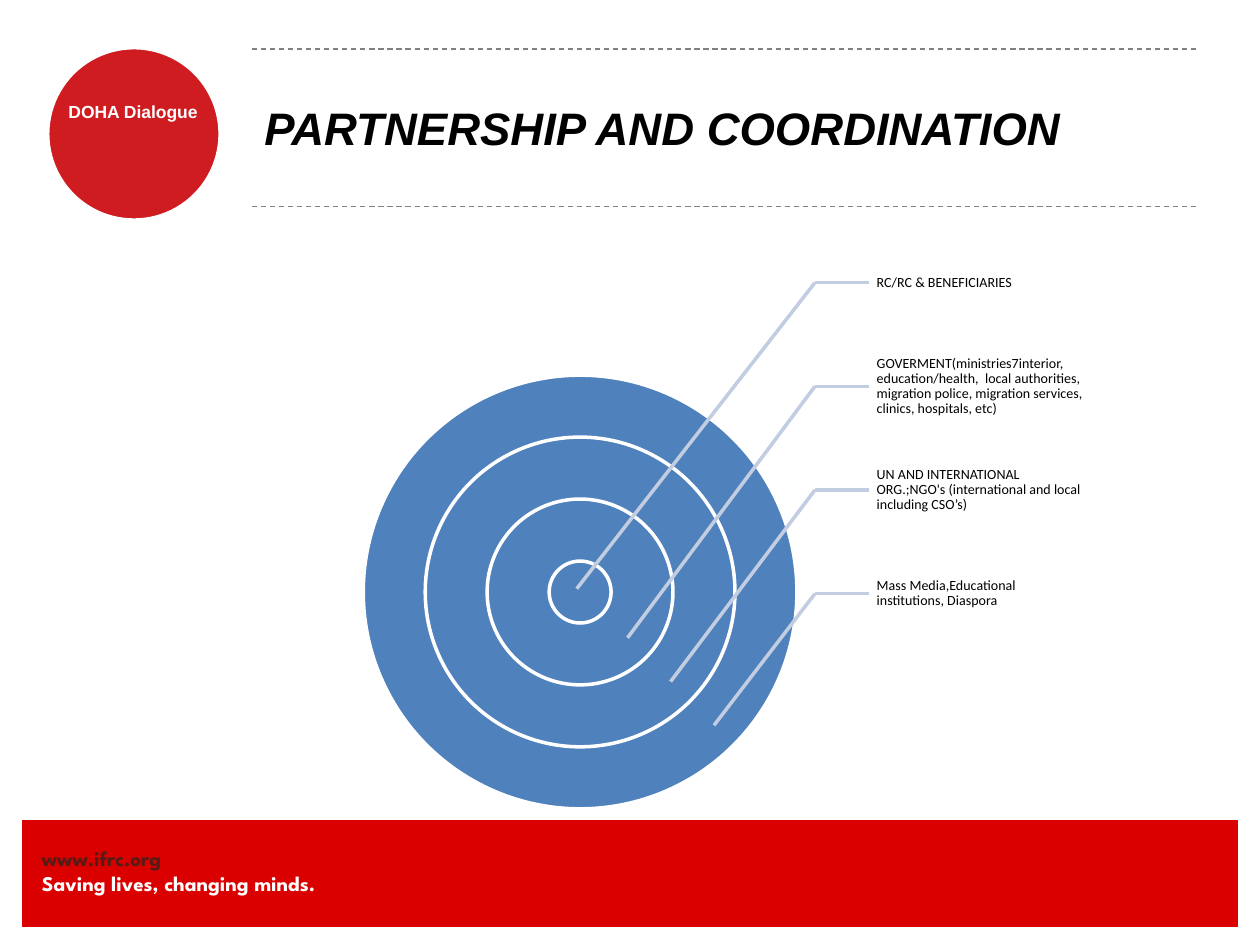
from dataclasses import dataclass
from typing import Any

from lxml import etree
from pptx import Presentation
from pptx import util as u
from pptx.dml.color import RGBColor
from pptx.enum import dml, shapes, text
from pptx.oxml.ns import qn

COLORS = {
    "white": "FFFFFF", "black": "000000", "banner": "DB0000", "badge": "CF1C21",
    "address": "551C15", "rule": "808080", "ring": "4F81BD", "leader": "C2CDE1",
}


@dataclass
class Painter:
    """Draws styled elements on the current page, with lengths in points."""
    page: Any
    colors: dict

    def color(self, name):
        return RGBColor.from_string(self.colors[name])

    def shape(self, kind, left, top, width, height, fill, weight):
        shape = self.page.shapes.add_shape(
            kind, u.Pt(left), u.Pt(top), u.Pt(width), u.Pt(height))
        shape.shadow.inherit = False
        shape.fill.solid()
        shape.fill.fore_color.rgb = self.color(fill)
        shape.line.color.rgb = self.color("white")
        shape.line.width = u.Pt(weight)
        return shape

    def circle(self, x, y, radius, fill, weight):
        return self.shape(shapes.MSO_SHAPE.OVAL, x - radius, y - radius,
                          2 * radius, 2 * radius, fill, weight)

    def line(self, start, end, color, weight, dash=None):
        line = self.page.shapes.add_connector(
            shapes.MSO_CONNECTOR.STRAIGHT, *(u.Pt(v) for v in (*start, *end)))
        line.line.color.rgb = self.color(color)
        line.line.width = u.Pt(weight)
        if dash:
            line.line.dash_style = dash
        etree.SubElement(line._element.spPr, qn("a:effectLst"))
        return line

    def text(self, left, top, width, height, lines, size, font, insets=(0, 0, 0, 0),
             bold=False, italic=False, align=text.PP_ALIGN.LEFT,
             anchor=text.MSO_ANCHOR.TOP, spacing=1.0):
        box = self.page.shapes.add_textbox(
            u.Pt(left), u.Pt(top), u.Pt(width), u.Pt(height))
        frame = box.text_frame
        frame.word_wrap = True
        frame.vertical_anchor = anchor
        (frame.margin_left, frame.margin_top,
         frame.margin_right, frame.margin_bottom) = (u.Pt(v) for v in insets)
        for index, (words, color) in enumerate(lines):
            para = frame.add_paragraph() if index else frame.paragraphs[0]
            para.alignment = align
            para.line_spacing = spacing
            span = para.add_run()
            span.text = words
            span.font.name = font
            span.font.size = u.Pt(size)
            span.font.bold = bold
            span.font.italic = italic
            span.font.color.rgb = self.color(color)
        return box


def draw_frame(painter):
    painter.shape(shapes.MSO_SHAPE.RECTANGLE, 12, 468, 696, 62, "banner", 0.75)
    painter.text(24, 483, 246, 29,
                 [("www.ifrc.org", "address"), ("Saving lives, changing minds.", "white")],
                 12, "League Spartan", bold=True)
    painter.circle(76.5, 76.5, 49.5, "badge", 2.5)
    painter.text(31, 58, 90, 12, [("DOHA Dialogue", "white")], 10, "Arial",
                 bold=True, align=text.PP_ALIGN.CENTER)
    for y in (28, 118):
        painter.line((144, y), (684, y), "rule", 0.75, dml.MSO_LINE.DASH)
    painter.text(144, 27.5, 540, 90, [("PARTNERSHIP AND COORDINATION", "black")],
                 26, "Arial", insets=(7.2, 3.6, 7.2, 3.6), bold=True, italic=True,
                 anchor=text.MSO_ANCHOR.MIDDLE)


def draw_target(painter):
    core, pitch, elbow = 17.7, 59.25, 465.7
    labels = [
        ("RC/RC & BENEFICIARIES", (329.6, 336.4)),
        ("GOVERMENT(ministries7interior, education/health,  local authorities,  "
         "migration police, migration services, clinics, hospitals, etc)", (358.6, 364.5)),
        ("UN AND INTERNATIONAL ORG.;NGO's (international and local including CSO’s)",
         (383.2, 389.5)),
        ("Mass Media,Educational institutions, Diaspora", (408, 414.5)),
    ]
    for step in (7, 5, 3, 1):
        painter.circle(331.5, 338.3, step * core, "ring", 2)
    for index, (words, target) in enumerate(labels):
        top = 131.9 + index * pitch
        middle = top + pitch / 2
        label = painter.text(496.7, top, 124, pitch, [(words, "black")], 8, "Calibri",
                             insets=(4.3, 0.8, 0.8, 0.8),
                             anchor=text.MSO_ANCHOR.MIDDLE, spacing=0.9)
        arm = painter.line((elbow, middle), (496.7, middle), "leader", 2)
        arm.end_connect(label, 1)
        painter.line((elbow, middle), target, "leader", 2)


def main():
    deck = Presentation()
    deck.slide_width, deck.slide_height = u.Pt(720), u.Pt(540)
    painter = Painter(deck.slides.add_slide(deck.slide_layouts[6]), COLORS)
    draw_frame(painter)
    draw_target(painter)
    deck.save("out.pptx")


if __name__ == "__main__":
    main()
